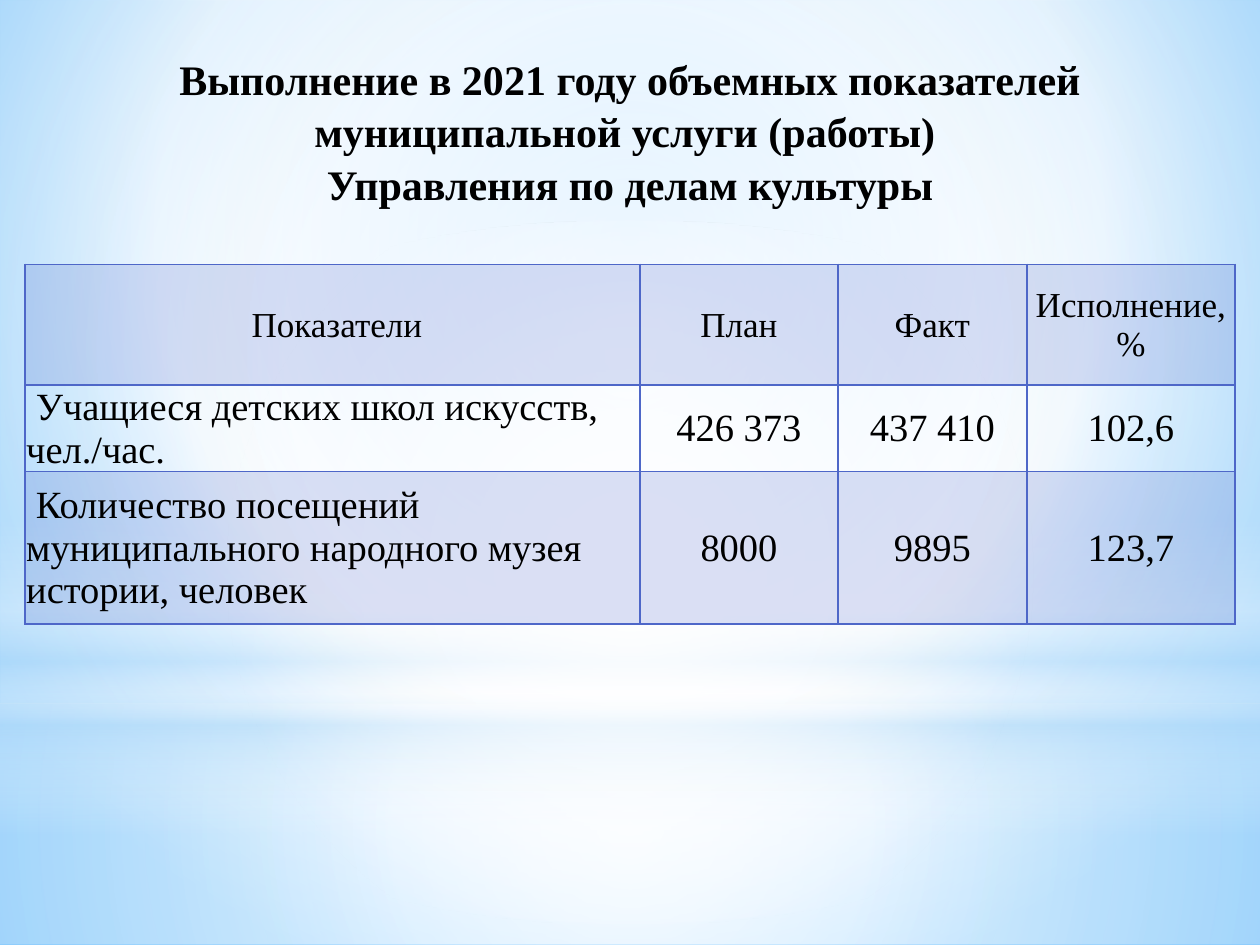
from lxml.etree import SubElement
from pptx import Presentation
from pptx.dml.color import RGBColor
from pptx.enum.shapes import MSO_SHAPE
from pptx.enum.text import MSO_ANCHOR, PP_ALIGN
from pptx.oxml.ns import qn
from pptx.util import Pt

BLACK = RGBColor(0x00, 0x00, 0x00)
WHITE = RGBColor(0xFF, 0xFF, 0xFF)
INDIGO = RGBColor(0x4E, 0x67, 0xC8)
PALE_BLUE = RGBColor(0xB4, 0xDC, 0xFA)
SKY = RGBColor(0x9E, 0xD5, 0xFF)
DEEP_SKY = RGBColor(0x5B, 0xB9, 0xFF)
FONT = "Times New Roman"
CENTER = (50, 50, 50, 50)

TITLE = ("Выполнение в 2021 году объемных показателей "
         "муниципальной услуги (работы) \vУправления по делам культуры")
INDICATORS = [
    ["Показатели", "План", "Факт", "Исполнение, %"],
    ["Учащиеся детских школ искусств, чел./час.", "426 373", "437 410", "102,6"],
    ["Количество посещений муниципального народного музея истории, человек",
     "8000", "9895", "123,7"],
]
COLUMN_WIDTHS = [351.5, 113, 108, 119]
ROW_HEIGHTS = [69, 45.5, 87]

BACKDROP = [
    (MSO_SHAPE.RECTANGLE, (0, 402, 720, 138),
     [(0, WHITE, 91), (37, WHITE, 76), (100, PALE_BLUE, 79)], CENTER),
    (MSO_SHAPE.RECTANGLE, (0, 0, 720, 402),
     [(0, WHITE, 89), (48, WHITE, 62), (100, PALE_BLUE, 79)], CENTER),
    (MSO_SHAPE.RECTANGLE, (0, 297, 720, 180),
     [(0, WHITE, 0), (29, WHITE, 30), (45, PALE_BLUE, 40),
      (55, WHITE, 26), (65, PALE_BLUE, 60), (100, WHITE, 0)], None),
    (MSO_SHAPE.OVAL, (0, 126, 720, 402),
     [(0, WHITE, 100), (56, WHITE, 0)], CENTER),
]


def add_color(parent, color, opacity):
    """Append a colour with the given opacity in percent."""
    swatch = SubElement(parent, qn("a:srgbClr"), val=str(color))
    if opacity < 100:
        SubElement(swatch, qn("a:alpha"), val=str(opacity * 1000))


def set_gradient(fill, owner, stops, focus):
    """Fill with a circular gradient around focus, or a vertical one without it."""
    fill.gradient()
    gradient = owner.find(".//" + qn("a:gradFill"))
    for part in list(gradient):
        gradient.remove(part)
    stop_list = SubElement(gradient, qn("a:gsLst"))
    for position, color, opacity in stops:
        stop = SubElement(stop_list, qn("a:gs"), pos=str(position * 1000))
        add_color(stop, color, opacity)
    if focus:
        circle = SubElement(gradient, qn("a:path"), path="circle")
        edges = {side: str(share * 1000) for side, share in zip("ltrb", focus)}
        SubElement(circle, qn("a:fillToRect"), **edges)
    else:
        SubElement(gradient, qn("a:lin"), ang="5400000", scaled="0")


def add_backdrop(slide):
    """Paint the sky background and its layers of soft light."""
    set_gradient(slide.background.fill, slide.element,
                 [(0, SKY, 100), (60, WHITE, 100), (100, DEEP_SKY, 100)],
                 (20, 10, 20, 60))
    for kind, box, stops, focus in BACKDROP:
        glow = slide.shapes.add_shape(kind, *map(Pt, box))
        glow.shadow.inherit = False
        glow.line.fill.background()
        set_gradient(glow.fill, glow.element, stops, focus)


def format_text(paragraph, size, bold, alignment):
    """Align a paragraph and set the font of its runs."""
    paragraph.alignment = alignment
    for run in paragraph.runs:
        run.font.name = FONT
        run.font.size = Pt(size)
        run.font.bold = bold
        run.font.color.rgb = BLACK


def place_title(slide, left, top, width, height):
    """Fill the title placeholder and bring it in front of the backdrop."""
    title = slide.shapes.title
    title.left, title.top, title.width, title.height = map(Pt, (left, top, width, height))
    title.text_frame.text = TITLE
    title.text_frame.vertical_anchor = MSO_ANCHOR.MIDDLE
    heading = title.text_frame.paragraphs[0]
    heading.line_spacing = 1.05
    format_text(heading, 24, True, PP_ALIGN.CENTER)
    slide.shapes.element.append(title.element)


def style_cell(cell, shaded):
    """Set the borders, margins and translucent fill of a cell."""
    cell.vertical_anchor = MSO_ANCHOR.MIDDLE
    cell.margin_left = cell.margin_top = cell.margin_right = Pt(0.75)
    cell.margin_bottom = 0
    properties = cell._tc.get_or_add_tcPr()
    for side in ("lnL", "lnR", "lnT", "lnB"):
        border = SubElement(properties, qn("a:" + side), w=str(Pt(1)))
        add_color(SubElement(border, qn("a:solidFill")), INDIGO, 100)
    if shaded:
        add_color(SubElement(properties, qn("a:solidFill")), INDIGO, 20)
    else:
        cell.fill.background()


def add_indicators(slide, left, top):
    """Add the table of planned and actual indicators."""
    frame = slide.shapes.add_table(
        len(ROW_HEIGHTS), len(COLUMN_WIDTHS), Pt(left), Pt(top),
        Pt(sum(COLUMN_WIDTHS)), Pt(sum(ROW_HEIGHTS)))
    table = frame.table
    table.first_row = table.horz_banding = False
    for column, width in zip(table.columns, COLUMN_WIDTHS):
        column.width = Pt(width)
    for row_index, (row, height, texts) in enumerate(
            zip(table.rows, ROW_HEIGHTS, INDICATORS)):
        row.height = Pt(height)
        for column_index, (cell, text) in enumerate(zip(row.cells, texts)):
            is_name = column_index == 0
            cell.text_frame.text = " " + text if is_name else text
            style_cell(cell, row_index % 2 == 0)
            format_text(cell.text_frame.paragraphs[0],
                        22 if row_index else 20, False,
                        PP_ALIGN.LEFT if is_name and row_index else PP_ALIGN.CENTER)


def main():
    """Build and save the slide."""
    deck = Presentation()
    deck.slide_width, deck.slide_height = Pt(720), Pt(540)
    slide = deck.slides.add_slide(deck.slide_layouts[5])
    add_backdrop(slide)
    place_title(slide, 36, 26, 648, 96.5)
    add_indicators(slide, 14.25, 151)
    deck.save("out.pptx")


if __name__ == "__main__":
    main()
